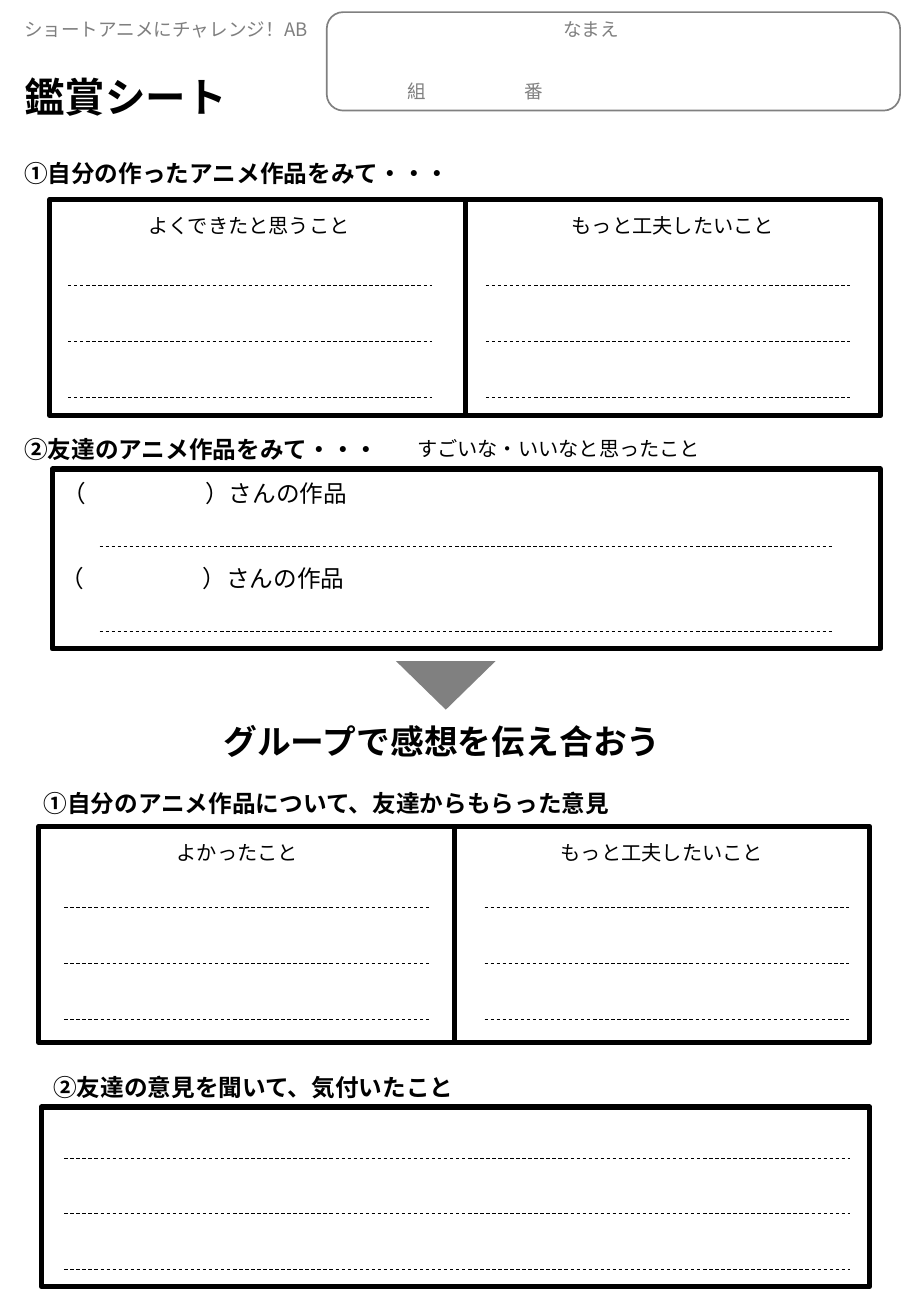
import pptx
import pptx.dml.color
import pptx.enum.dml
import pptx.enum.shapes
import pptx.enum.text
import pptx.oxml.ns
import pptx.util
from lxml import etree
from pptx.util import Inches

COLORS = {"ink": "000000", "label": "7F7F7F", "frame": "808080"}
JP = "Noto Sans CJK JP"
SHAPES = pptx.enum.shapes.MSO_SHAPE
ALIGN = pptx.enum.text.PP_ALIGN


def rgb(name):
    """Return the named colour."""
    return pptx.dml.color.RGBColor.from_string(COLORS[name])


def add_xml(parent, tag, **attrs):
    """Append a DrawingML element and return it."""
    return etree.SubElement(parent, pptx.oxml.ns.qn(tag), **attrs)


def fill_text(sp, text, size, font=JP, color="ink", bold=False, align=ALIGN.LEFT, wrap=True):
    """Write one formatted paragraph into a shape."""
    tf = sp.text_frame
    tf.word_wrap = wrap
    tf.vertical_anchor = pptx.enum.text.MSO_ANCHOR.TOP
    tf.auto_size = pptx.enum.text.MSO_AUTO_SIZE.SHAPE_TO_FIT_TEXT
    tf.text = text
    p = tf.paragraphs[0]
    p.alignment = align
    r = p.runs[0]
    r.font.size = pptx.util.Pt(size)
    r.font.bold = bold
    r.font.name = font
    r.font.color.rgb = rgb(color)
    add_xml(r.font._element, "a:ea", typeface=JP)
    return p


def add_text(s, x, y, w, h, text, size, **style):
    """Add a text box."""
    sp = s.shapes.add_textbox(Inches(x), Inches(y), Inches(w), Inches(h))
    return fill_text(sp, text, size, **style)


def add_heading(s, x, y, w, text):
    """Add a bold section heading."""
    add_text(s, x, y, w, 0.34, text, 14, bold=True, wrap=False)


def add_caption(s, x, y, w, text):
    """Add a centred caption."""
    add_text(s, x, y, w, 0.3, text, 12, font="Calibri", align=ALIGN.CENTER, wrap=False)


def add_frame(s, x, y, w, h, kind=SHAPES.RECTANGLE, color="ink", width=3):
    """Add an unfilled frame."""
    sp = s.shapes.add_shape(kind, Inches(x), Inches(y), Inches(w), Inches(h))
    sp.shadow.inherit = False
    sp.fill.background()
    sp.line.color.rgb = rgb(color)
    sp.line.width = pptx.util.Pt(width)


def add_rules(s, x, y, w, count=3, step=0.46):
    """Add evenly spaced dashed writing lines."""
    for i in range(count):
        top = Inches(y + i * step)
        line = s.shapes.add_connector(
            pptx.enum.shapes.MSO_CONNECTOR.STRAIGHT, Inches(x), top, Inches(x + w), top)
        line.line.color.rgb = rgb("ink")
        line.line.width = pptx.util.Pt(0.5)
        line.line.dash_style = pptx.enum.dml.MSO_LINE.DASH
        add_xml(line._element.spPr, "a:effectLst")


def add_header(s, x, y):
    """Place the lesson name, the title and the name box."""
    add_text(s, x, y, 2.82, 0.29, "ショートアニメにチャレンジ！AB", 11, color="label")
    add_frame(s, x + 2.59, y, 4.72, 0.81, SHAPES.ROUNDED_RECTANGLE, "frame", 1)
    for dx, dy, w, text in [(3.16, 0.51, 0.49, "組"), (4.12, 0.51, 0.49, "番"),
                            (4.44, 0, 0.96, "なまえ")]:
        add_text(s, x + dx, y + dy, w, 0.29, text, 11, color="label")
    title = s.shapes.title
    title.left, title.top = Inches(x), Inches(y + 0.44)
    title.width, title.height = Inches(2.59), Inches(0.5)
    fill_text(title, "鑑賞シート", 24, bold=True)


def add_pair(s, x, y, columns, first_rule):
    """Place two adjoining boxes with captions and writing lines."""
    w = 3.42
    for i, (caption, caption_dx, caption_w, rule_dx) in enumerate(columns):
        left = x + i * w
        add_frame(s, left, y, w, 1.78)
        add_caption(s, left + caption_dx, y + 0.07, caption_w, caption)
        add_rules(s, left + rule_dx, y + first_rule, 3)


def add_friends(s, x, y):
    """Place the box for comments on two friends' works."""
    add_frame(s, x, y, 6.82, 1.48)
    for i in range(2):
        top = y + 0.03 + i * 0.7
        p = add_text(s, x - 0.02 * (i + 1) + 0.01, top, 2.72, 0.34,
                     "（\t）さんの作品", 14, font="Calibri")
        tabs = add_xml(p._p.get_or_add_pPr(), "a:tabLst")
        add_xml(tabs, "a:tab", pos=str(Inches(1.17)), algn="l")
    add_rules(s, x + 0.39, y + 0.64, 6.03, count=2, step=0.7)


def add_group_banner(s, x, y):
    """Place the down arrow and the group discussion heading."""
    sp = s.shapes.add_shape(SHAPES.ISOSCELES_TRIANGLE, Inches(x + 1.52), Inches(y),
                            Inches(0.82), Inches(0.4))
    sp.rotation = 180
    sp.shadow.inherit = False
    sp.fill.solid()
    sp.fill.fore_color.rgb = rgb("frame")
    sp.line.fill.background()
    add_text(s, x, y + 0.44, 3.85, 0.44, "グループで感想を伝え合おう", 20, bold=True, wrap=False)


def add_findings(s, x, y):
    """Place the box for what was noticed."""
    add_frame(s, x, y, 6.82, 1.48)
    add_rules(s, x + 0.19, y + 0.42, 6.47)


def main():
    """Build the appreciation sheet."""
    prs = pptx.Presentation()
    prs.slide_width, prs.slide_height = Inches(7.5), Inches(10.83)
    s = prs.slides.add_slide(prs.slide_layouts[5])
    add_header(s, 0.1, 0.1)
    add_heading(s, 0.1, 1.26, 3.74, "①自分の作ったアニメ作品をみて・・・")
    add_pair(s, 0.41, 1.64, [("よくできたと思うこと", 0.7, 1.88, 0.15),
                             ("もっと工夫したいこと", 0.77, 1.88, 0.17)], 0.71)
    add_heading(s, 0.1, 3.53, 3.15, "②友達のアニメ作品をみて・・・")
    add_caption(s, 3.32, 3.54, 2.56, "すごいな・いいなと思ったこと")
    add_friends(s, 0.43, 3.86)
    add_group_banner(s, 1.74, 5.44)
    add_heading(s, 0.26, 6.44, 4.91, "①自分のアニメ作品について、友達からもらった意見")
    add_pair(s, 0.32, 6.8, [("よかったこと", 1.03, 1.21, 0.21),
                            ("もっと工夫したいこと", 0.77, 1.88, 0.25)], 0.67)
    add_heading(s, 0.34, 8.78, 3.54, "②友達の意見を聞いて、気付いたこと")
    add_findings(s, 0.34, 9.11)
    prs.save("out.pptx")


if __name__ == "__main__":
    main()
